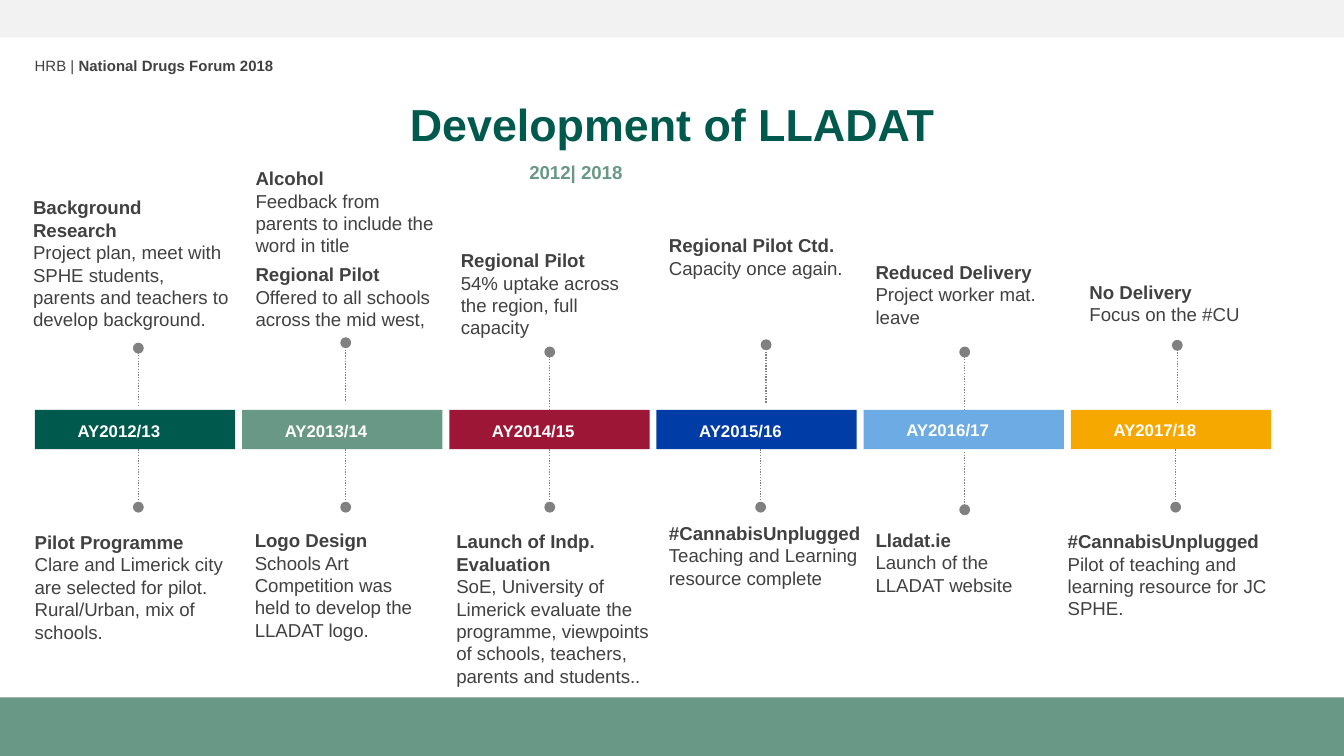
import pptx
import pptx.util
import pptx.dml.color
import pptx.enum.dml
import pptx.enum.shapes
import pptx.enum.text
from lxml import etree

Pt = pptx.util.Pt
SHAPE = pptx.enum.shapes.MSO_SHAPE

COLORS = {
    "band": "F2F2F2", "sage": "699887", "green": "00594D", "red": "9D1635",
    "navy": "003CA6", "sky": "6DABE4", "amber": "F7A800",
    "text": "414141", "white": "FFFFFF", "pin": "808080",
}

# Timeline bars: (year, colour, label top)
YEARS = [
    ("AY2012/13", "green", 221.8), ("AY2013/14", "sage", 221.8),
    ("AY2014/15", "red", 221.8), ("AY2015/16", "navy", 221.8),
    ("AY2016/17", "sky", 221.2), ("AY2017/18", "amber", 221.2),
]
BAR_LEFT, BAR_TOP, BAR_STEP, BAR_W, BAR_H = 18.7, 219.6, 111, 107.3, 21

# Pins: (x, y at the bar end)
PINS_UP = [(74.1, 217.5), (185.2, 214.6), (294.5, 219.6),
           (410.4, 215.7), (516.8, 219.6), (630.7, 216)]
PINS_DOWN = [(74.1, 240.7), (185.2, 240.7), (294.5, 240.7),
             (407.5, 240.7), (516.8, 242.1), (629.8, 240.7)]
PIN_LENGTH, DOT_REACH, DOT = 32, 31, 5.8

# Notes: (left, top, width, lines, heading, body)
NOTES = [
    # Above the timeline
    (10.6, 101.5, 118.8, 6, "Background Research",
     "Project plan, meet with SPHE students, parents and teachers to develop background."),
    (129.8, 85.9, 114.5, 4, "Alcohol",
     "Feedback from parents to include the word in title"),
    (129.8, 137.3, 114.5, 3, "Regional Pilot",
     "Offered to all schools across the mid west,"),
    (239.8, 129.8, 108, 4, "Regional Pilot",
     "54% uptake across the region, full capacity"),
    (351.3, 121.8, 108, 2, "Regional Pilot Ctd.", "Capacity once again."),
    (462, 136.1, 108, 3, "Reduced Delivery", "Project worker mat. leave"),
    (576.6, 146.8, 108, 2, "No Delivery", "Focus on the #CU"),
    # Below the timeline
    (11.5, 280.8, 118.1, 5, "Pilot Programme",
     "Clare and Limerick city are selected for pilot. Rural/Urban, mix of schools."),
    (129.4, 279.9, 107.3, 5, "Logo Design",
     "Schools Art Competition was held to develop the LLADAT logo."),
    (237.4, 280.5, 122.4, 7, "Launch of Indp. Evaluation",
     "SoE, University of Limerick evaluate the programme, viewpoints of schools, "
     "teachers, parents and students.."),
    (351.3, 276, 118.8, 3, "#CannabisUnplugged",
     "Teaching and Learning resource complete"),
    (462, 279.7, 103, 3, "Lladat.ie", "Launch of the LLADAT website"),
    (564.9, 280.4, 136.1, 4, "#CannabisUnplugged",
     "Pilot of teaching and learning resource for JC SPHE."),
]


def rgb(name):
    return pptx.dml.color.RGBColor.from_string(COLORS[name])


def add_block(shapes, kind, x, y, w, h, color):
    sp = shapes.add_shape(kind, Pt(x), Pt(y), Pt(w), Pt(h))
    sp.shadow.inherit = False
    sp.fill.solid()
    sp.fill.fore_color.rgb = rgb(color)
    sp.line.fill.background()


def add_text(s, x, y, w, h, wrap=False):
    tf = s.shapes.add_textbox(Pt(x), Pt(y), Pt(w), Pt(h)).text_frame
    tf.word_wrap = wrap
    tf.auto_size = pptx.enum.text.MSO_AUTO_SIZE.SHAPE_TO_FIT_TEXT
    return tf


def style_run(r, size, color, bold):
    r.font.name = "Arial"
    r.font.size = Pt(size)
    r.font.bold = bold
    r.font.color.rgb = rgb(color)


def add_label(s, x, y, w, h, text, size, color):
    tf = add_text(s, x, y, w, h)
    tf.text = text
    p = tf.paragraphs[0]
    style_run(p.runs[0], size, color, True)
    return p


def add_note(s, x, y, w, lines, heading, body):
    tf = add_text(s, x, y, w, 7.2 + 12.1 * lines, wrap=True)
    tf.text = heading + "\n" + body
    for p, bold in zip(tf.paragraphs, (True, False)):
        style_run(p.runs[0], 10, "text", bold)


def add_pin(s, x, y, direction):
    shapes = s.shapes.add_group_shape().shapes
    line = shapes.add_connector(pptx.enum.shapes.MSO_CONNECTOR.STRAIGHT,
                                Pt(x), Pt(y), Pt(x), Pt(y + direction * PIN_LENGTH))
    line.line.color.rgb = rgb("pin")
    line.line.width = Pt(0.75)
    line.line.dash_style = pptx.enum.dml.MSO_LINE.ROUND_DOT
    etree.SubElement(line.element.spPr, pptx.oxml.ns.qn("a:effectLst"))
    center = y + direction * DOT_REACH
    add_block(shapes, SHAPE.OVAL, x - DOT / 2, center - DOT / 2, DOT, DOT, "pin")


def add_header(s):
    p = add_text(s, 11.5, 26.6, 144, 17.3).paragraphs[0]
    for text, bold in (("HRB | ", False), ("National Drugs Forum 2018", True)):
        r = p.add_run()
        r.text = text
        style_run(r, 8, "text", bold)
    title = add_label(s, 211, 48.2, 298, 36, "Development of LLADAT", 24, "green")
    title.alignment = pptx.enum.text.PP_ALIGN.CENTER
    add_label(s, 276.5, 82.8, 64.8, 19.4, "2012| 2018", 10, "sage")


def main():
    prs = pptx.Presentation()
    prs.slide_width, prs.slide_height = Pt(720), Pt(405)
    s = prs.slides.add_slide(prs.slide_layouts[6])

    # Top and bottom bands
    add_block(s.shapes, SHAPE.RECTANGLE, 0, 0, 720, 20, "band")
    add_block(s.shapes, SHAPE.RECTANGLE, 0, 373.7, 720, 31.3, "sage")
    add_header(s)

    # Timeline bars
    for i, (year, color, top) in enumerate(YEARS):
        x = BAR_LEFT + i * BAR_STEP
        add_block(s.shapes, SHAPE.RECTANGLE, x, BAR_TOP, BAR_W, BAR_H, color)
        add_label(s, x + 15.8, top, 59.8, 18, year, 9, "white")

    # Notes and their pins
    for note in NOTES:
        add_note(s, *note)
    for pins, direction in ((PINS_UP, -1), (PINS_DOWN, 1)):
        for x, y in pins:
            add_pin(s, x, y, direction)

    prs.save("out.pptx")


if __name__ == "__main__":
    main()
